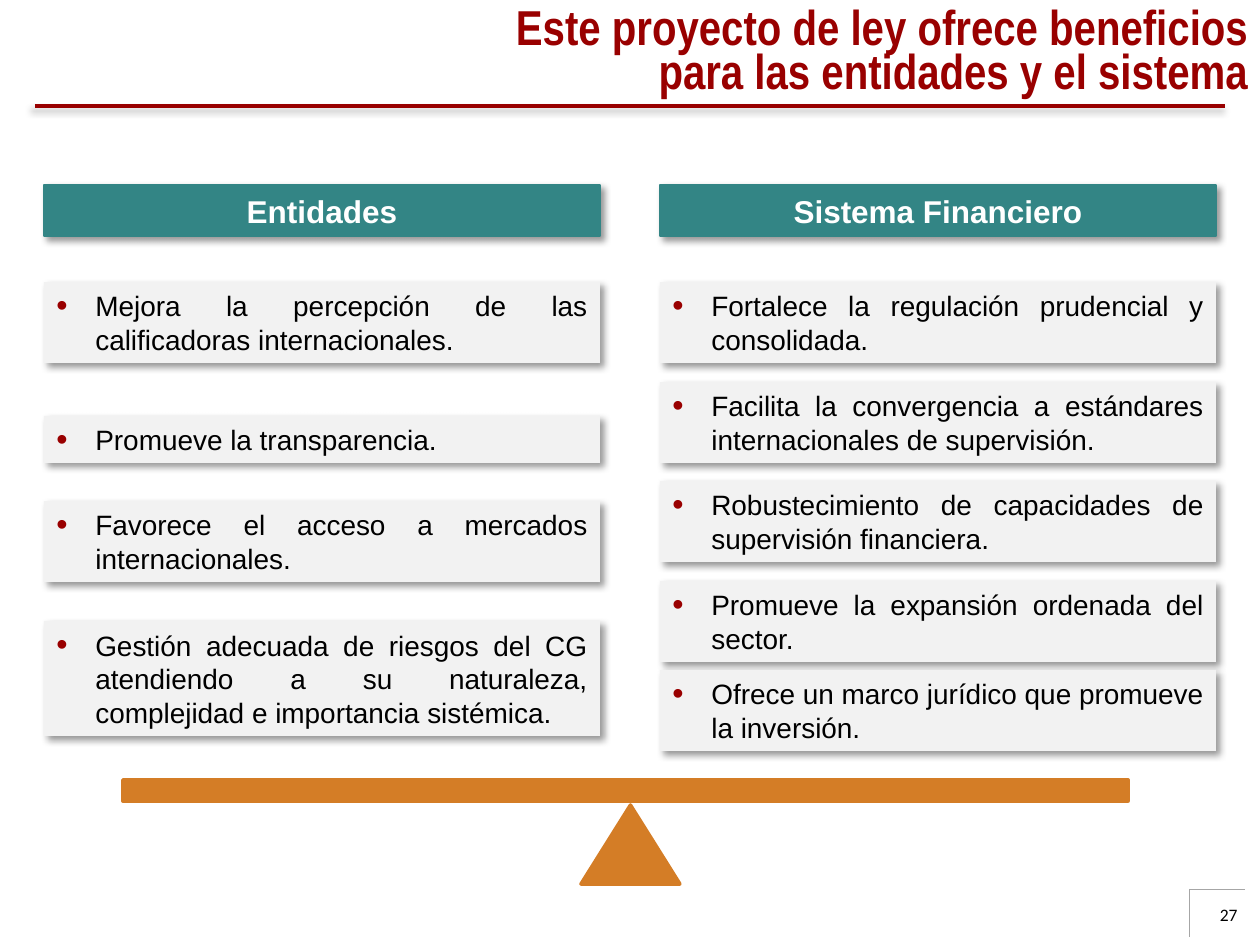
from dataclasses import dataclass

from lxml.etree import SubElement
from pptx import Presentation
from pptx.dml.color import RGBColor
from pptx.enum.shapes import MSO_CONNECTOR, MSO_SHAPE
from pptx.enum.text import MSO_ANCHOR, MSO_AUTO_SIZE, PP_ALIGN
from pptx.oxml.ns import qn
from pptx.util import Emu, Pt

PX = 914400 / 126
RED = RGBColor(0x99, 0x00, 0x00)
TEAL = RGBColor(0x33, 0x85, 0x85)
ORANGE = RGBColor(0xD4, 0x7D, 0x26)
PALE = RGBColor(0xF2, 0xF2, 0xF2)
GREY = RGBColor(0xA6, 0xA6, 0xA6)
BLACK = RGBColor(0x00, 0x00, 0x00)
WHITE = RGBColor(0xFF, 0xFF, 0xFF)

TITLE_FONT = {"name": "Arial Narrow", "size": Pt(28), "bold": True}
HEAD_FONT = {"name": "Arial", "size": Pt(18), "bold": True}
CARD_FONT = {"name": "Arial", "size": Pt(16), "bold": False}
NUMBER_FONT = {"name": "Calibri", "size": Pt(10), "bold": False}

COLUMN_W = 556
HEAD_TOP, HEAD_H = 185, 51
CARD_PAD, LINE_H = 13, 34
INDENT = 39


@dataclass
class Card:
    top: int
    lines: int
    text: str


@dataclass
class Column:
    left: int
    heading: str
    cards: list[Card]


@dataclass
class Rule:
    x1: int
    y1: int
    x2: int
    y2: int
    color: RGBColor
    weight: float
    shadow: bool = False


COLUMNS = [
    Column(44, "Entidades", [
        Card(282, 2, "Mejora la percepción de las calificadoras internacionales."),
        Card(416, 1, "Promueve la transparencia."),
        Card(501, 2, "Favorece el acceso a mercados internacionales."),
        Card(621, 3, "Gestión adecuada de riesgos del CG atendiendo a su naturaleza, "
                     "complejidad e importancia sistémica."),
    ]),
    Column(660, "Sistema Financiero", [
        Card(282, 2, "Fortalece la regulación prudencial y consolidada."),
        Card(382, 2, "Facilita la convergencia a estándares internacionales de supervisión."),
        Card(481, 2, "Robustecimiento de capacidades de supervisión financiera."),
        Card(581, 2, "Promueve la expansión ordenada del sector."),
        Card(670, 2, "Ofrece un marco jurídico que promueve la inversión."),
    ]),
]

RULES = [
    Rule(35, 106, 1225, 106, RED, 2, True),
    Rule(1190, 889, 1245, 889, GREY, 0.25),
    Rule(1189, 889, 1189, 937, GREY, 0.25),
]


def px(n: int) -> Emu:
    return Emu(round(n * PX))


def add_shadow(effects, angle: int) -> None:
    shadow = SubElement(effects, qn("a:outerShdw"), blurRad=str(Pt(4)), dist=str(Pt(3)),
                        dir=str(angle * 60000), algn="tl", rotWithShape="0")
    color = SubElement(shadow, qn("a:srgbClr"), val="000000")
    SubElement(color, qn("a:alpha"), val="40000")


def add_rule(slide, rule: Rule) -> None:
    line = slide.shapes.add_connector(MSO_CONNECTOR.STRAIGHT, px(rule.x1), px(rule.y1),
                                      px(rule.x2), px(rule.y2))
    line.line.color.rgb = rule.color
    line.line.width = Pt(rule.weight)
    effects = SubElement(line._element.spPr, qn("a:effectLst"))
    if rule.shadow:
        add_shadow(effects, 135)


def add_block(slide, kind, box: tuple, fill: RGBColor, weight: float = 0,
              shadow: bool = False):
    sp = slide.shapes.add_shape(kind, *map(px, box))
    sp.shadow.inherit = False
    sp.fill.solid()
    sp.fill.fore_color.rgb = fill
    if weight:
        sp.line.color.rgb = fill
        sp.line.width = Pt(weight)
    else:
        sp.line.fill.background()
    if shadow:
        add_shadow(sp._element.spPr.find(qn("a:effectLst")), 45)
    return sp


def write(sp, text: str, font: dict, color: RGBColor, align, anchor=MSO_ANCHOR.MIDDLE):
    tf = sp.text_frame
    tf.word_wrap = True
    tf.auto_size = MSO_AUTO_SIZE.NONE
    tf.vertical_anchor = anchor
    p = tf.paragraphs[0]
    p.alignment = align
    r = p.add_run()
    r.text = text
    for name, value in font.items():
        setattr(r.font, name, value)
    r.font.color.rgb = color
    return p


def set_indent(p, indent: int):
    pPr = p._p.get_or_add_pPr()
    pPr.set("marL", str(px(indent)))
    pPr.set("indent", str(-px(indent)))
    return pPr


def add_bullet(p) -> None:
    pPr = set_indent(p, INDENT)
    SubElement(SubElement(pPr, qn("a:buClr")), qn("a:srgbClr"), val=str(RED))
    SubElement(pPr, qn("a:buSzPct"), val="115000")
    SubElement(pPr, qn("a:buFont"), typeface="Arial")
    SubElement(pPr, qn("a:buChar"), char="•")


def add_column(slide, col: Column) -> None:
    head = add_block(slide, MSO_SHAPE.RECTANGLE, (col.left, HEAD_TOP, COLUMN_W, HEAD_H),
                     TEAL, 0.75, True)
    write(head, col.heading, HEAD_FONT, WHITE, PP_ALIGN.CENTER)
    for card in col.cards:
        box = (col.left, card.top, COLUMN_W, CARD_PAD + LINE_H * card.lines)
        sp = add_block(slide, MSO_SHAPE.RECTANGLE, box, PALE, shadow=True)
        add_bullet(write(sp, card.text, CARD_FONT, BLACK, PP_ALIGN.JUSTIFY))


def main() -> None:
    prs = Presentation()
    prs.slide_width, prs.slide_height = px(1260), px(945)
    slide = prs.slides.add_slide(prs.slide_layouts[5])

    # Title
    title = slide.shapes.title
    title.left, title.top, title.width, title.height = map(px, (461, 3, 799, 102))
    p = write(title, "Este proyecto de ley ofrece beneficios para las entidades y el sistema",
              TITLE_FONT, RED, PP_ALIGN.RIGHT)
    p.line_spacing = 0.75
    set_indent(p, 71)

    # Rules and page number
    for rule in RULES:
        add_rule(slide, rule)
    number = slide.shapes.add_textbox(*map(px, (1172, 898, 78, 50)))
    write(number, "27", NUMBER_FONT, BLACK, PP_ALIGN.RIGHT, MSO_ANCHOR.TOP)

    # Balance
    add_block(slide, MSO_SHAPE.RECTANGLE, (123, 780, 1005, 21), ORANGE, 2)
    add_block(slide, MSO_SHAPE.ISOSCELES_TRIANGLE, (581, 805, 99, 79), ORANGE, 2)

    # Benefits
    for col in COLUMNS:
        add_column(slide, col)

    prs.save("out.pptx")


if __name__ == "__main__":
    main()
